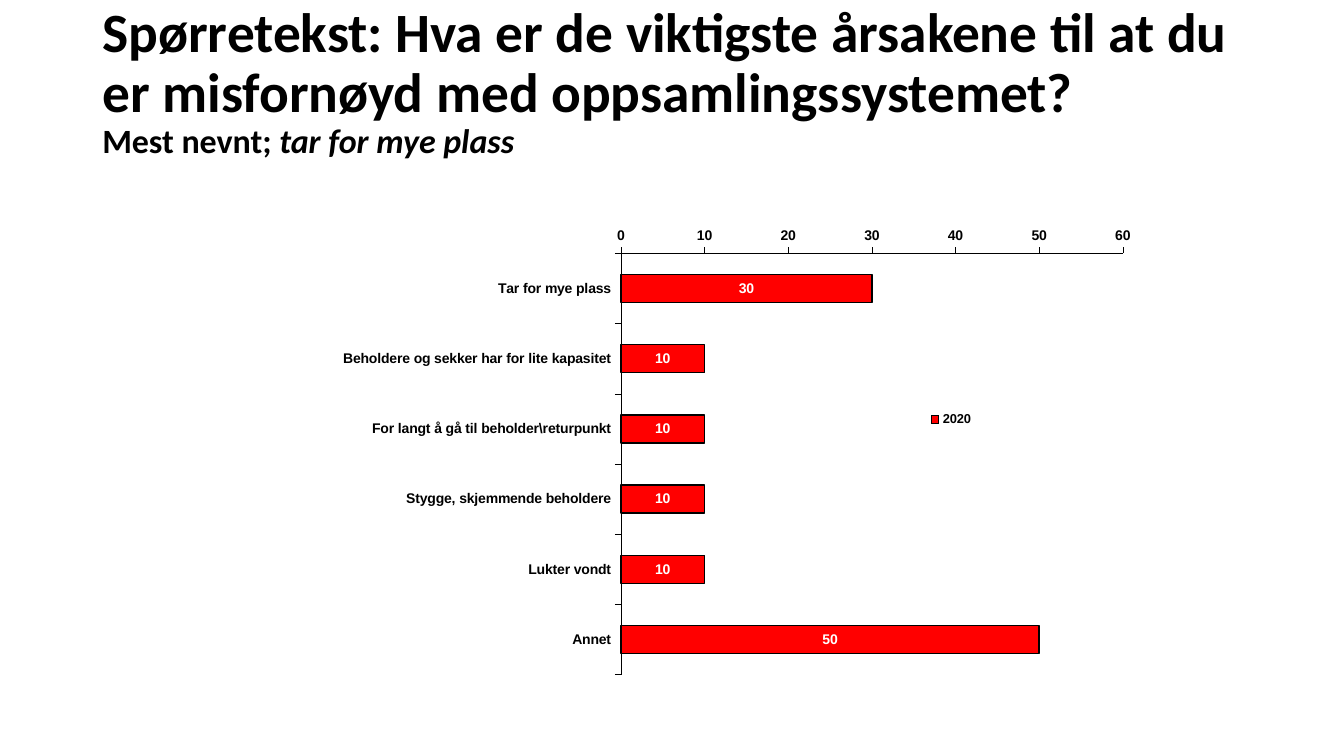
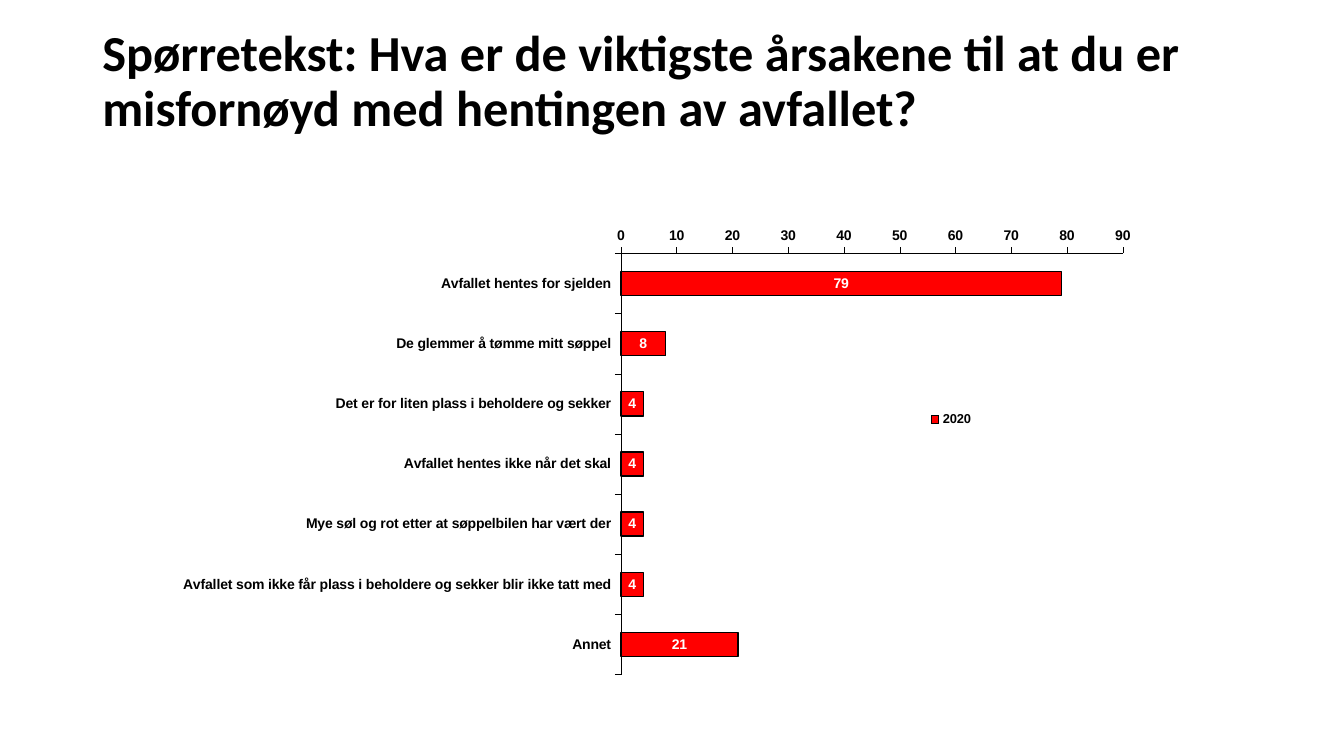
"""Build two survey slides, each a question title above a stacked bar chart."""
from pptx import Presentation
from pptx.chart.data import CategoryChartData
from pptx.dml.color import RGBColor
from pptx.enum.chart import XL_CHART_TYPE as ChartType, XL_LABEL_POSITION as LabelPos
from pptx.enum.chart import XL_LEGEND_POSITION as LegendPos, XL_TICK_MARK as TickMark
from pptx.enum.text import MSO_ANCHOR
from pptx.oxml import parse_xml
from pptx.oxml.ns import nsdecls, qn
from pptx.util import Pt

PX = 9525
COLORS = {"text": "000000", "bar": "FF0000", "label": "FFFFFF"}
PLOT_LAYOUT = {"layoutTarget": "inner", "xMode": "edge", "yMode": "edge",
               "x": 0.456, "y": 0.108, "w": 0.433, "h": 0.878}
LEGEND_LAYOUT = {"xMode": "edge", "yMode": "edge", "x": 0.72, "y": 0.43}

SURVEY = [
    {
        "question": "Spørretekst: Hva er de viktigste årsakene til at du er "
                    "misfornøyd med oppsamlingssystemet?",
        "size": 39.6,
        "finding": [("Mest nevnt; ", False), ("tar for mye plass", True)],
        "answers": {
            "Tar for mye plass": 30,
            "Beholdere og sekker har for lite kapasitet": 10,
            "For langt å gå til beholder\\returpunkt": 10,
            "Stygge, skjemmende beholdere": 10,
            "Lukter vondt": 10,
            "Annet": 50,
        },
        "maximum": 60,
    },
    {
        "question": "Spørretekst: Hva er de viktigste årsakene til at du er "
                    "misfornøyd med hentingen av avfallet?",
        "size": 36,
        "finding": [],
        "answers": {
            "Avfallet hentes for sjelden": 79,
            "De glemmer å tømme mitt søppel": 8,
            "Det er for liten plass i beholdere og sekker": 4,
            "Avfallet hentes ikke når det skal": 4,
            "Mye søl og rot etter at søppelbilen har vært der": 4,
            "Avfallet som ikke får plass i beholdere og sekker blir ikke tatt med": 4,
            "Annet": 21,
        },
        "maximum": 90,
    },
]


def style_font(font, name, size, color="text", italic=False):
    font.name, font.size, font.bold, font.italic = name, Pt(size), True, italic
    font.color.rgb = RGBColor.from_string(COLORS[color])


def place(parent, index, layout):
    for old in parent.findall(qn("c:layout")):
        parent.remove(old)
    entries = "".join(f'<c:{key} val="{value}"/>' for key, value in layout.items())
    parent.insert(index, parse_xml(
        f'<c:layout {nsdecls("c")}><c:manualLayout>{entries}</c:manualLayout></c:layout>'))


deck = Presentation()
deck.slide_width, deck.slide_height = 1280 * PX, 720 * PX

for topic in SURVEY:
    slide = deck.slides.add_slide(deck.slide_layouts[6])

    title = slide.shapes.add_textbox(88 * PX, 0, 1104 * PX, 158 * PX).text_frame
    title.word_wrap = True
    title.vertical_anchor = MSO_ANCHOR.MIDDLE
    title.margin_top = title.margin_bottom = 0
    title.text = topic["question"]
    style_font(title.paragraphs[0].runs[0].font, "Calibri", topic["size"])
    if topic["finding"]:
        finding = title.add_paragraph()
        for words, italic in topic["finding"]:
            run = finding.add_run()
            run.text = words
            style_font(run.font, "Calibri", 24.3, italic=italic)
    for paragraph in title.paragraphs:
        paragraph.line_spacing = 0.9

    data = CategoryChartData()
    data.categories = topic["answers"].keys()
    data.add_series("2020", topic["answers"].values())
    chart = slide.shapes.add_chart(
        ChartType.BAR_STACKED, 88 * PX, 192 * PX, 1104 * PX, 457 * PX, data).chart
    chart.has_title = False
    style_font(chart.font, "Arial", 10)

    for axis in (chart.category_axis, chart.value_axis):
        axis.has_major_gridlines = False
        axis.major_tick_mark = TickMark.OUTSIDE
        axis.minor_tick_mark = TickMark.NONE
        axis.format.line.color.rgb = RGBColor.from_string(COLORS["text"])
        axis.format.line.width = Pt(0.25)
        style_font(axis.tick_labels.font, "Arial", 10)
    chart.category_axis.reverse_order = True
    chart.value_axis.minimum_scale = 0
    chart.value_axis.maximum_scale = topic["maximum"]
    chart.value_axis.major_unit = 10

    plot = chart.plots[0]
    plot.gap_width, plot.overlap, plot.vary_by_categories = 150, 100, False
    bars = plot.series[0]
    bars.format.fill.solid()
    bars.format.fill.fore_color.rgb = RGBColor.from_string(COLORS["bar"])
    bars.format.line.color.rgb = RGBColor.from_string(COLORS["text"])
    bars.format.line.width = Pt(1)
    bars.data_labels.show_value = True
    bars.data_labels.position = LabelPos.CENTER
    style_font(bars.data_labels.font, "Arial", 10, "label")

    chart.has_legend = True
    chart.legend.position = LegendPos.RIGHT
    chart.legend.include_in_layout = False
    style_font(chart.legend.font, "Arial", 9.2)

    chart_root = chart.element
    place(chart_root.find(".//" + qn("c:plotArea")), 0, PLOT_LAYOUT)
    place(chart_root.find(".//" + qn("c:legend")), 1, LEGEND_LAYOUT)

deck.save("out.pptx")
